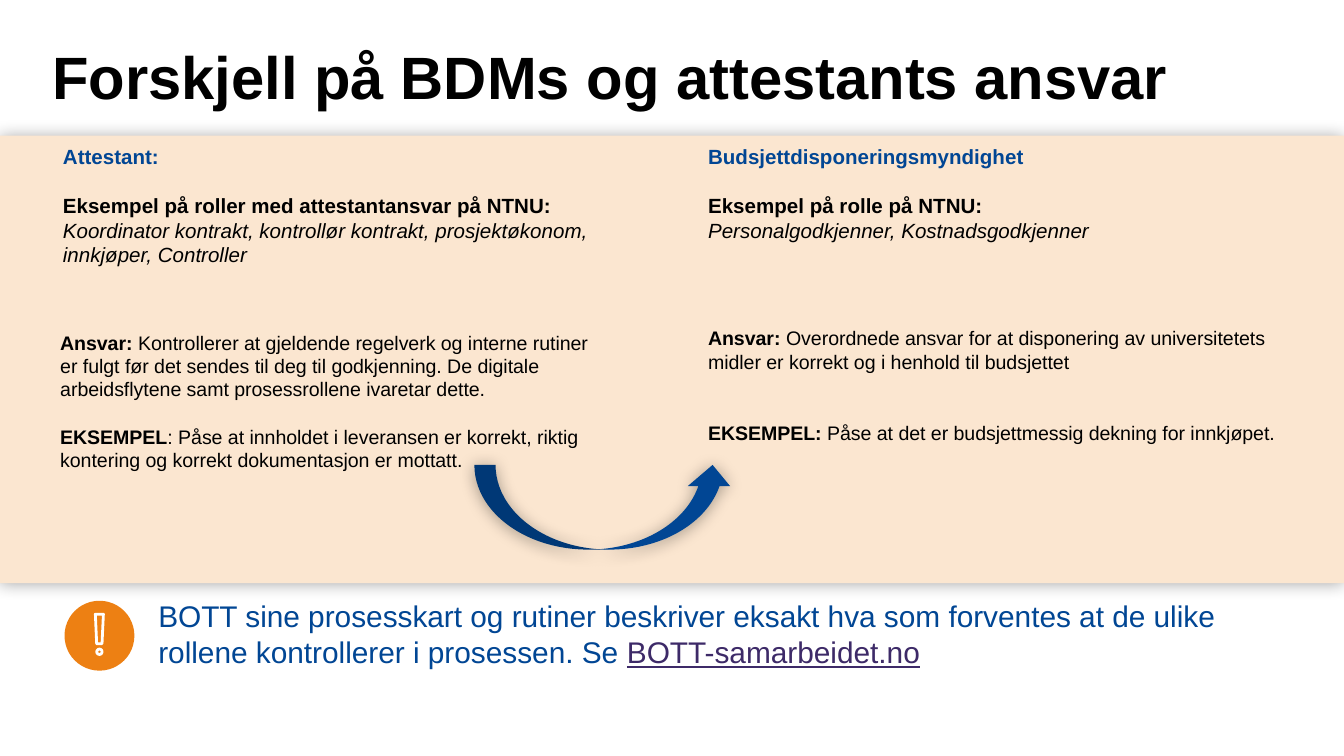
from lxml import etree
from pptx import Presentation
from pptx import util as u
from pptx.dml.color import RGBColor
from pptx.enum import shapes, text
from pptx.oxml import ns

COLORS = {
    "black": "000000",
    "white": "FFFFFF",
    "blue": "014694",
    "link": "3D2A68",
    "band": "FBE6D0",
    "orange": "ED8013",
}
BOLD = {"bold": True}
ITALIC = {"italic": True}
HEADING = {"bold": True, "color": "blue"}
BLUE = {"color": "blue"}
LINK = {"color": "link", "underline": True}


def rgb(name):
    return RGBColor.from_string(COLORS[name])


def place(sp, box):
    for name, value in zip(("left", "top", "width", "height"), box):
        setattr(sp, name, u.Inches(value))


def add_run(p, words, size, style):
    r = p.add_run()
    r.text = words
    values = {"name": "Arial", "size": u.Pt(size), **style}
    r.font.color.rgb = rgb(values.pop("color", "black"))
    for name, value in values.items():
        setattr(r.font, name, value)


def fill_text(tf, size, paragraphs):
    for i, (gap, runs) in enumerate(paragraphs):
        p = tf.paragraphs[0] if i == 0 else tf.add_paragraph()
        p.alignment = text.PP_ALIGN.LEFT
        if gap:
            p.space_before = u.Pt(gap)
        for words, style in runs:
            add_run(p, words, size, style)


def add_title(s, words):
    sp = s.shapes.title
    place(sp, (0.29, 0.24, 9.21, 0.64))
    tf = sp.text_frame
    tf.auto_size = text.MSO_AUTO_SIZE.NONE
    tf.vertical_anchor = text.MSO_ANCHOR.BOTTOM
    fill_text(tf, 32, [(0, [(words, BOLD)])])


def add_text(s, box, size, paragraphs):
    sp = s.shapes.add_textbox(*map(u.Inches, box))
    sp.text_frame.word_wrap = True
    fill_text(sp.text_frame, size, paragraphs)


def paint(sp, fill=None, line=None):
    sp.shadow.inherit = False
    if fill:
        sp.fill.solid()
        sp.fill.fore_color.rgb = rgb(fill)
    else:
        sp.fill.background()
    if line:
        sp.line.color.rgb = rgb(line)
        sp.line.width = u.Pt(1.5)
    else:
        sp.line.fill.background()


def add_shape(s, kind, box, fill=None, line=None):
    sp = s.shapes.add_shape(kind, *map(u.Inches, box))
    paint(sp, fill, line)
    return sp


def add_shadow(sp):
    effects = sp._element.spPr.find(ns.qn("a:effectLst"))
    shadow = etree.SubElement(
        effects, ns.qn("a:outerShdw"), blurRad=str(u.Pt(9)), dist=str(u.Pt(1)),
        dir="5400000", rotWithShape="0")
    color = etree.SubElement(shadow, ns.qn("a:srgbClr"), val=COLORS["black"])
    etree.SubElement(color, ns.qn("a:alpha"), val="35000")


def add_warning_icon(s):
    oval = shapes.MSO_SHAPE.OVAL
    add_shape(s, oval, (0.48, 4.47, 0.52, 0.52), "orange")
    points = [(0.71, 4.57), (0.77, 4.57), (0.76, 4.79), (0.72, 4.79)]
    corners = [(u.Inches(x), u.Inches(y)) for x, y in points]
    builder = s.shapes.build_freeform(*corners[0])
    builder.add_line_segments(corners[1:], close=True)
    paint(builder.convert_to_shape(), line="white")
    add_shape(s, oval, (0.72, 4.83, 0.04, 0.04), line="white")


def main():
    prs = Presentation()
    prs.slide_width = u.Inches(10)
    prs.slide_height = prs.slide_width * 9 // 16
    s = prs.slides.add_slide(prs.slide_layouts[5])

    add_shadow(add_shape(s, shapes.MSO_SHAPE.RECTANGLE, (0, 1.01, 10, 3.33), "band"))
    add_title(s, "Forskjell på BDMs og attestants ansvar")

    add_text(s, (0.37, 1.02, 4.27, 1.03), 11, [
        (0, [("Attestant:", HEADING)]),
        (13.2, [
            ("Eksempel på roller med attestantansvar på NTNU: ", BOLD),
            ("Koordinator kontrakt, kontrollør kontrakt, prosjektøkonom, "
             "innkjøper, Controller", ITALIC)]),
    ])
    add_text(s, (5.17, 1.02, 4.78, 1.03), 11, [
        (0, [("Budsjettdisponeringsmyndighet", HEADING)]),
        (13.2, [("Eksempel på rolle på NTNU:", BOLD)]),
        (0, [("Personalgodkjenner, Kostnadsgodkjenner", ITALIC)]),
    ])
    add_text(s, (0.35, 2.41, 4.27, 1.34), 10.5, [
        (0, [
            ("Ansvar: ", BOLD),
            ("Kontrollerer at gjeldende regelverk og interne rutiner er fulgt "
             "før det sendes til deg til godkjenning. De digitale "
             "arbeidsflytene samt prosessrollene ivaretar dette.", {})]),
        (12.6, [
            ("EKSEMPEL", BOLD),
            (": Påse at innholdet i leveransen er korrekt, riktig kontering "
             "og korrekt dokumentasjon er mottatt.", {})]),
    ])
    add_text(s, (5.17, 2.38, 4.59, 1.34), 10.5, [
        (0, [
            ("Ansvar: ", BOLD),
            ("Overordnede ansvar for at disponering av universitetets midler "
             "er korrekt og i henhold til budsjettet", {})]),
        (25.2, [
            ("EKSEMPEL: ", BOLD),
            ("Påse at det er budsjettmessig dekning for innkjøpet.", {})]),
    ])
    add_text(s, (1.08, 4.4, 8.74, 0.64), 16, [
        (0, [
            ("BOTT sine prosesskart og rutiner beskriver eksakt hva som "
             "forventes at de ulike rollene kontrollerer i prosessen. Se ", BLUE),
            ("BOTT-samarbeidet.no", LINK)]),
    ])

    add_warning_icon(s)
    arrow = add_shape(
        s, shapes.MSO_SHAPE.CURVED_UP_ARROW, (3.53, 3.46, 1.93, 0.63), "blue")
    add_shadow(arrow)
    prs.save("out.pptx")


if __name__ == "__main__":
    main()
